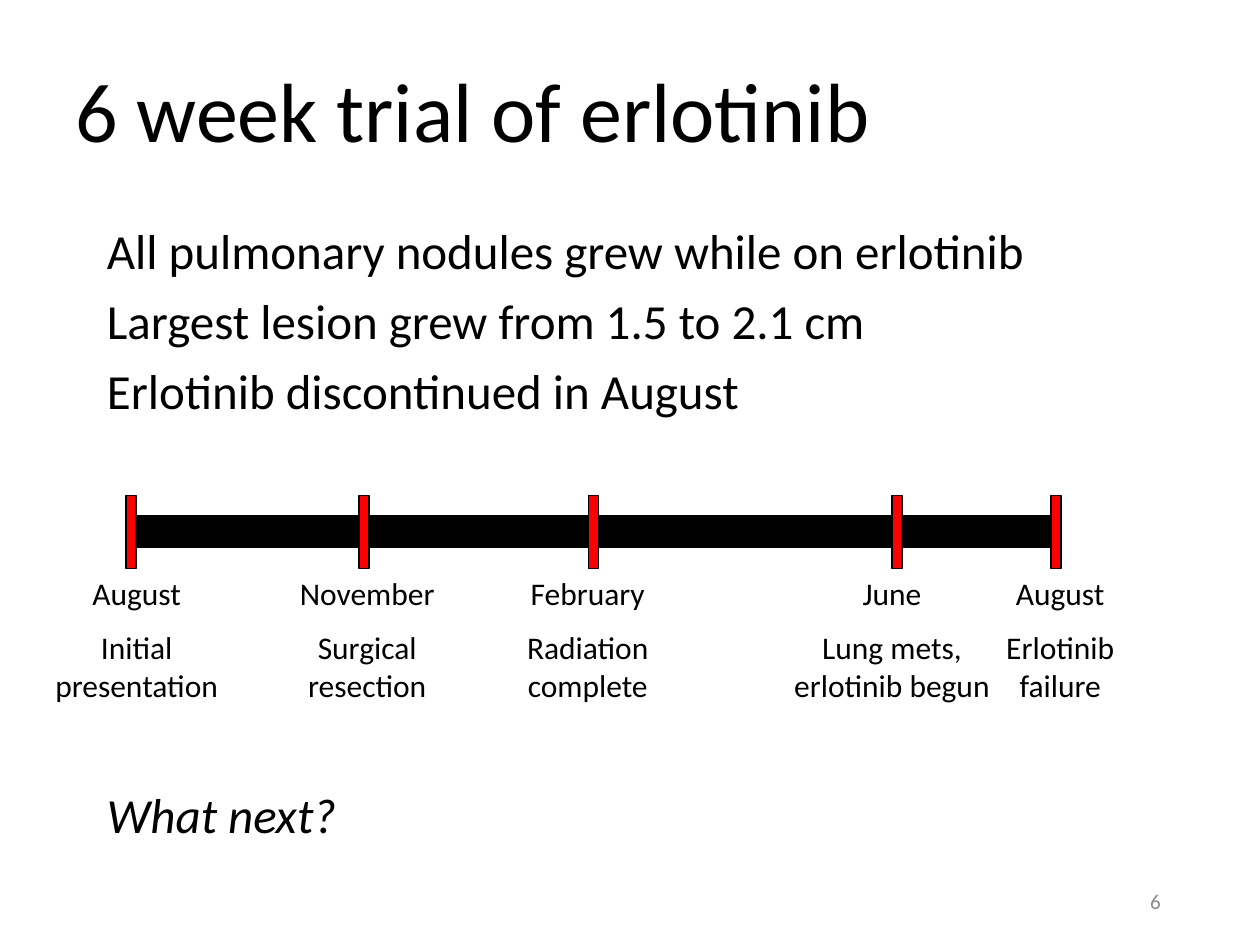
from dataclasses import dataclass

from pptx import Presentation
from pptx.dml.color import RGBColor
from pptx.enum.shapes import MSO_SHAPE
from pptx.enum.text import MSO_ANCHOR as Anchor, PP_ALIGN as Align
from pptx.util import Pt

EMU_PER_PX = 9144  # 100 px to the inch


@dataclass(frozen=True)
class Theme:
    font: str = "Calibri"
    ink: RGBColor = RGBColor(0, 0, 0)
    marker: RGBColor = RGBColor(255, 0, 0)
    muted: RGBColor = RGBColor(0x8C, 0x8C, 0x8C)
    title: int = 48
    body: int = 28
    label: int = 18
    number: int = 12


THEME = Theme()

FINDINGS = [
    "All pulmonary nodules grew while on erlotinib",
    "Largest lesion grew from 1.5 to 2.1 cm",
    "Erlotinib discontinued in August",
]

# marker left, label left, label width (relative to the timeline), month, event
EVENTS = [
    (75, 0, 167, "August", "Initial presentation"),
    (260, 183, 167, "November", "Surgical resection"),
    (442, 358, 167, "February", "Radiation complete"),
    (683, 583, 200, "June", "Lung mets, erlotinib begun"),
    (809, 733, 167, "August", "Erlotinib failure"),
]


def px(length):
    return int(length * EMU_PER_PX)


def add_text(slide, box, lines, size, color=THEME.ink, align=Align.LEFT,
             anchor=Anchor.TOP, spacing=1.0, gap=0, italic=False):
    """Add a wrapped text box, with gap points between its paragraphs."""
    frame = slide.shapes.add_textbox(*map(px, box)).text_frame
    frame.word_wrap = True
    frame.vertical_anchor = anchor
    frame.text = "\n".join(lines)
    for index, paragraph in enumerate(frame.paragraphs):
        paragraph.alignment = align
        paragraph.line_spacing = spacing
        paragraph.space_before = Pt(gap if index else 0)
        for run in paragraph.runs:
            run.font.name = THEME.font
            run.font.size = Pt(size)
            run.font.color.rgb = color
            run.font.italic = italic


def add_bar(slide, box, fill):
    bar = slide.shapes.add_shape(MSO_SHAPE.RECTANGLE, *map(px, box))
    bar.shadow.inherit = False
    bar.fill.solid()
    bar.fill.fore_color.rgb = fill
    bar.line.color.rgb = THEME.ink
    bar.line.width = Pt(0.75)


def add_title(slide, box):
    add_text(slide, box, ["6 week trial of erlotinib"], THEME.title,
             anchor=Anchor.MIDDLE, spacing=0.9)


def add_findings(slide, box):
    add_text(slide, box, FINDINGS, THEME.body, spacing=0.9, gap=10)


def add_timeline(slide, box):
    left, top, _, height = box
    marker_width, marker_height, axis_height = 8, 58, 25
    axis_left = EVENTS[0][0] + marker_width
    axis_top = top + (marker_height - axis_height) / 2
    add_bar(slide, (left + axis_left, axis_top,
                    EVENTS[-1][0] - axis_left, axis_height), THEME.ink)
    for marker_left, label_left, label_width, month, event in EVENTS:
        add_bar(slide, (left + marker_left, top, marker_width, marker_height),
                THEME.marker)
        add_text(slide, (left + label_left, top + marker_height,
                         label_width, height - marker_height),
                 [month, event], THEME.label, align=Align.CENTER, gap=9)


def add_question(slide, box):
    add_text(slide, box, ["What next?"], THEME.body, spacing=0.9, italic=True)


def add_slide_number(slide, box):
    add_text(slide, box, ["6"], THEME.number, color=THEME.muted,
             align=Align.RIGHT, anchor=Anchor.MIDDLE)


def main():
    deck = Presentation()
    deck.slide_width, deck.slide_height = px(1000), px(750)
    slide = deck.slides.add_slide(deck.slide_layouts[6])
    add_title(slide, (50, 50, 900, 83))
    add_findings(slide, (75, 175, 892, 170))
    add_timeline(slide, (25, 393, 900, 173))
    add_question(slide, (75, 623, 892, 55))
    add_slide_number(slide, (706, 695, 225, 40))
    deck.save("out.pptx")


if __name__ == "__main__":
    main()
